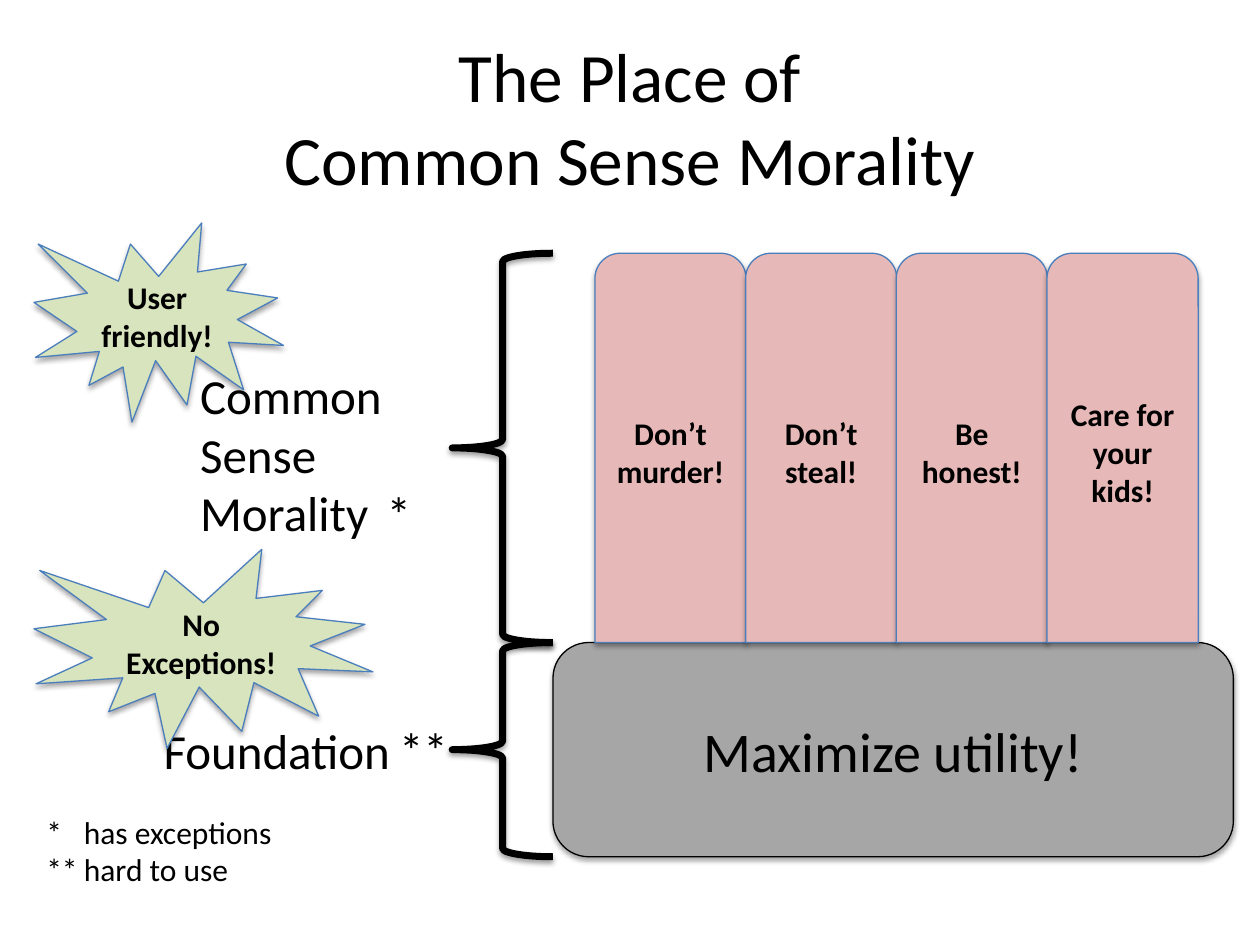
from lxml import etree
from pptx import Presentation
from pptx.dml.color import RGBColor
from pptx.enum.shapes import MSO_SHAPE
from pptx.enum.text import MSO_ANCHOR, PP_ALIGN
from pptx.oxml.ns import qn
from pptx.util import Pt

BRACE = MSO_SHAPE.LEFT_BRACE
BLOCK = MSO_SHAPE.ROUNDED_RECTANGLE
PILLAR = MSO_SHAPE.ROUND_2_SAME_RECTANGLE
BURST = MSO_SHAPE.EXPLOSION1
LEFT, CENTER = PP_ALIGN.LEFT, PP_ALIGN.CENTER
MIDDLE, TOP = MSO_ANCHOR.MIDDLE, MSO_ANCHOR.TOP

BLACK, BLUE = "000000", "4B7EBC"
GRAY, PINK, GREEN = "A6A6A6", "E6B9B8", "D7E4BD"


def color(hex_code):
    return RGBColor.from_string(hex_code)


def apply(target, values):
    for name, value in values.items():
        setattr(target, name, value)


class Board:
    """Holds the current slide and the common text, outline and shadow style."""

    font_name = "Calibri"

    def __init__(self, slide):
        self.slide = slide

    def set_text(self, frame, text, size, align=LEFT, anchor=TOP, bold=False):
        frame.text = text
        apply(frame, {"word_wrap": True, "vertical_anchor": anchor})
        for paragraph in frame.paragraphs:
            paragraph.alignment = align
            for run in paragraph.runs:
                apply(run.font, {"name": self.font_name, "size": Pt(size), "bold": bold})
                run.font.color.rgb = color(BLACK)

    def title(self, text, box, size):
        heading = self.slide.shapes.title
        apply(heading, dict(zip(("left", "top", "width", "height"), map(Pt, box))))
        self.set_text(heading.text_frame, text, size, CENTER, MIDDLE)

    def label(self, text, box, size=28):
        frame = self.slide.shapes.add_textbox(*map(Pt, box)).text_frame
        self.set_text(frame, text, size)
        return frame

    def shape(self, preset, box, line, line_width=0.75, opacity=35, blur=3.1, drop=1.8):
        item = self.slide.shapes.add_shape(preset, *map(Pt, box))
        item.line.color.rgb = color(line)
        item.line.width = Pt(line_width)
        self.shadow(item, opacity, blur, drop)
        return item

    def shadow(self, item, opacity, blur, drop):
        item.shadow.inherit = False
        effects = item._element.spPr.find(qn("a:effectLst"))
        outer = etree.SubElement(effects, qn("a:outerShdw"), {
            "blurRad": str(Pt(blur)), "dist": str(Pt(drop)),
            "dir": "5400000", "rotWithShape": "0"})
        tint = etree.SubElement(outer, qn("a:srgbClr"), val=BLACK)
        etree.SubElement(tint, qn("a:alpha"), val=str(opacity * 1000))

    def panel(self, preset, text, box, fill, line=BLUE, size=18, bold=True):
        item = self.shape(preset, box, line)
        item.fill.solid()
        item.fill.fore_color.rgb = color(fill)
        self.set_text(item.text_frame, text, size, CENTER, MIDDLE, bold)

    def brace(self, box):
        self.shape(BRACE, box, BLACK, 4, opacity=38, drop=1.6).fill.background()

    def footnotes(self, text, box, indent):
        for paragraph in self.label(text, box, 18).paragraphs:
            properties = paragraph._p.get_or_add_pPr()
            properties.set("marL", str(Pt(indent)))
            properties.set("indent", str(-Pt(indent)))


def main():
    deck = Presentation()
    deck.slide_width, deck.slide_height = Pt(720), Pt(540)
    board = Board(deck.slides.add_slide(deck.slide_layouts[5]))

    # Two levels: rules on top, foundation below
    rules_top, rules_height = 144.7, 222.5
    base_top, base_height = rules_top + rules_height, 122.4
    brace_left, brace_width = 258.4, 57.6
    base_left = brace_left + brace_width

    # Level names and their braces
    board.label("Common Sense Morality", (107.3, 205.2, 151.2, 108.7))
    board.brace((brace_left, rules_top, brace_width, rules_height))
    board.label("Foundation", (86.4, 408.2, 151.2, 41))
    board.brace((brace_left, base_top, brace_width, base_height))

    board.title("The Place of\vCommon Sense Morality", (36, 21.6, 648, 90), 39.6)

    # Foundation and the pillars that stand on it
    board.panel(BLOCK, "Maximize utility!", (base_left, base_top, 388.8, base_height),
                GRAY, BLACK, 32, False)
    rules = ("Don’t\nmurder!", "Don’t\nsteal!", "Be honest!", "Care for your kids!")
    for index, rule in enumerate(rules):
        board.panel(PILLAR, rule, (340 + 86.1 * index, rules_top, 86.4, rules_height), PINK)

    # Advantages of each level
    for praise, top, width in (("User friendly!", 127.4, 142.6),
                               ("No Exceptions!", 313.9, 193.7)):
        board.panel(BURST, praise, (19.4, top, width, 113.8), GREEN)

    # Footnote marks and footnotes
    board.label("*", (213.8, 272.9, 44.6, 41))
    board.label("**", (221, 407.5, 44.6, 41))
    board.footnotes("*\thas exceptions\n**\thard to use", (19.4, 460.8, 201.6, 51.1), 21.5)

    deck.save("out.pptx")


if __name__ == "__main__":
    main()
